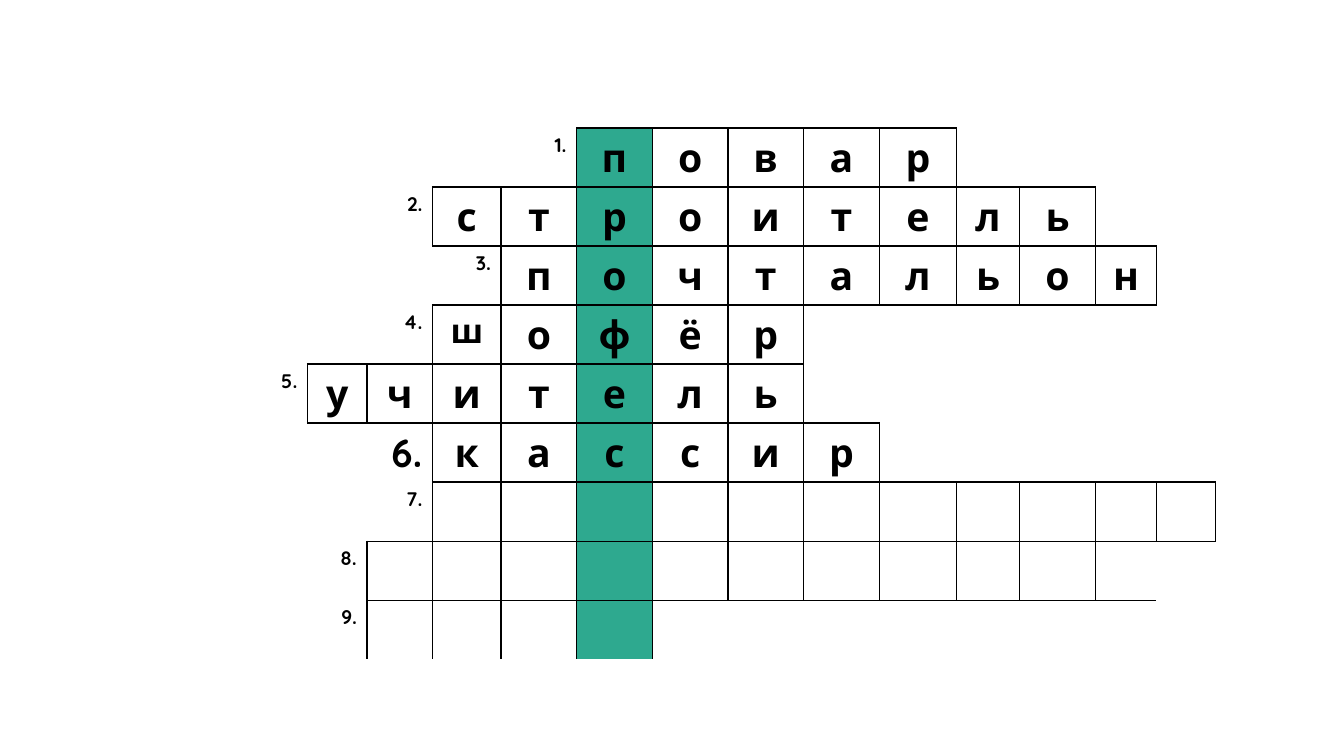
from pptx import Presentation
from pptx.dml.color import RGBColor
from pptx.enum.text import PP_ALIGN
from pptx.oxml.ns import qn
from pptx.util import Inches, Pt
from lxml.etree import SubElement

COLORS = {"ink": "000000", "paper": "FFFFFF", "key": "2EA98F"}
FONT = "Quicksand"
KEY_COL = 5
WIDTHS = [0.65, 0.59, 0.65, 0.68, 0.75, 0.75, 0.75, 0.75, 0.75, 0.77,
          0.62, 0.76, 0.6, 0.59]
WORDS = [
    (5, 5, "повар"),
    (3, 9, "строитель"),
    (4, 9, "почтальон"),
    (3, 5, "шофёр"),
    (1, 7, "учитель"),
    (3, 6, "кассир"),
    (3, 11, ""),
    (2, 10, ""),
    (2, 4, ""),
]
SPANS = [(0, 0, 3, 1), (3, 8, 4, 12), (3, 13, 4, 13), (5, 0, 8, 0),
         (5, 1, 6, 1), (5, 10, 5, 12), (8, 6, 8, 12), (9, 0, 9, 12)]
SIDES = {"lnL": (0, -1), "lnR": (0, 1), "lnT": (-1, 0), "lnB": (1, 0)}


def is_box(row, col):
    if not 0 <= row < len(WORDS):
        return False
    start, size, word = WORDS[row]
    return start <= col < start + size


def add_edge(cell, side, shown):
    props = cell._tc.get_or_add_tcPr()
    line = SubElement(props, qn("a:" + side), w=str(Pt(1)))
    if shown:
        fill = SubElement(line, qn("a:solidFill"))
        SubElement(fill, qn("a:srgbClr"), val=COLORS["ink"])
    else:
        SubElement(line, qn("a:noFill"))


def style_cell(cell, row, col):
    box = is_box(row, col)
    last = len(WORDS)
    for side, (down, right) in SIDES.items():
        near = is_box(row + down, col + right)
        base = row == last or (row == last - 1 and side == "lnB")
        add_edge(cell, side, (box or near) and not base)
    if box or is_box(row, col + 1):
        cell.fill.solid()
        name = "key" if box and col == KEY_COL else "paper"
        cell.fill.fore_color.rgb = RGBColor.from_string(COLORS[name])
    else:
        cell.fill.background()


def add_text(cell, text, size, align):
    para = cell.text_frame.paragraphs[0]
    para.alignment = align
    run = para.add_run()
    run.text = text
    run.font.name = FONT
    run.font.size = Pt(size)
    run.font.bold = True
    run.font.color.rgb = RGBColor.from_string(COLORS["ink"])


def add_word(table, row, start, word):
    size = 28 if word == "кассир" else 14
    add_text(table.cell(row, start - 1), f"{row + 1}.", size, PP_ALIGN.RIGHT)
    for step, letter in enumerate(word):
        size = 24 if letter == "ш" else 28
        add_text(table.cell(row, start + step), letter, size, PP_ALIGN.CENTER)


def add_grid(slide):
    count = len(WORDS)
    frame = slide.shapes.add_table(count + 1, len(WIDTHS), Inches(2.4),
                                   Inches(1.27), Inches(9.65), Inches(5.93))
    table = frame.table
    table.first_row = False
    table.horz_banding = False
    for col, width in enumerate(WIDTHS):
        table.columns[col].width = Inches(width)
    for row in range(count):
        table.rows[row].height = Inches(5.27) // count
    table.rows[count].height = Inches(0.66)
    for row in range(count + 1):
        for col in range(len(WIDTHS)):
            style_cell(table.cell(row, col), row, col)
    for top, left, base, right in SPANS:
        table.cell(top, left).merge(table.cell(base, right))
    return table


def main():
    deck = Presentation()
    deck.slide_width = Inches(13.33)
    deck.slide_height = Inches(7.5)
    slide = deck.slides.add_slide(deck.slide_layouts[6])
    table = add_grid(slide)
    for row, (start, size, word) in enumerate(WORDS):
        add_word(table, row, start, word)
    deck.save("out.pptx")


if __name__ == "__main__":
    main()
